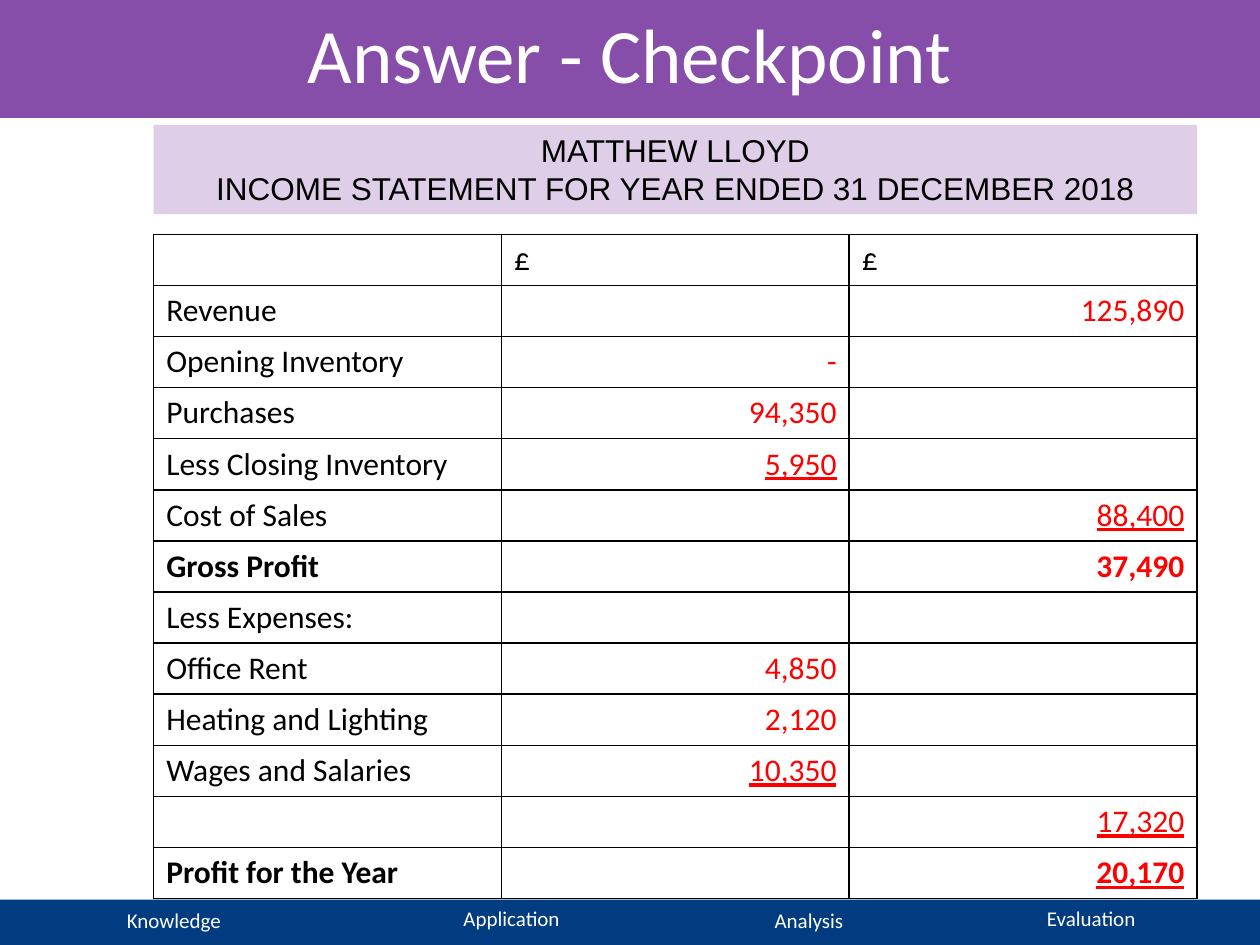
from dataclasses import dataclass

import pptx
import pptx.dml.color
import pptx.enum.shapes
import pptx.enum.text
import pptx.oxml
import pptx.oxml.ns
import pptx.util

ALIGN = pptx.enum.text.PP_ALIGN
ANCHOR = pptx.enum.text.MSO_ANCHOR
SLIDE_W, SLIDE_H = 10, 7.5


@dataclass(frozen=True)
class Theme:
    purple: str = "874EA9"
    lilac: str = "DECEE8"
    navy: str = "003C7F"
    white: str = "FFFFFF"
    black: str = "000000"
    answer: str = "FF0000"
    body_font: str = "Calibri"
    heading_font: str = "Arial"
    title_size: int = 44
    body_size: int = 18
    footer_size: int = 12
    rule_width: int = 1


THEME = Theme()

# Label, first column, second column; "_" marks an underlined amount.
STATEMENT = [
    ("", "£", "£"),
    ("Revenue", "", "125,890"),
    ("Opening Inventory", "-", ""),
    ("Purchases", "94,350", ""),
    ("Less Closing Inventory", "_5,950", ""),
    ("Cost of Sales", "", "_88,400"),
    ("Gross Profit", "", "37,490"),
    ("Less Expenses:", "", ""),
    ("Office Rent", "4,850", ""),
    ("Heating and Lighting", "2,120", ""),
    ("Wages and Salaries", "_10,350", ""),
    ("", "", "_17,320"),
    ("Profit for the Year", "", "_20,170"),
]
TOTALS = {"Gross Profit", "Profit for the Year"}

# Skill and the left and top of its label within the footer.
SKILLS = [("Knowledge", 0.04, 0.01), ("Application", 2.72, 0),
          ("Analysis", 5.08, 0.01), ("Evaluation", 7.32, 0)]
SKILL_SIZE = (2.68, 0.3)


def rgb(value):
    return pptx.dml.color.RGBColor.from_string(value)


def inches(box):
    return [pptx.util.Inches(length) for length in box]


def style(paragraph, color, size, font=THEME.body_font, align=ALIGN.CENTER,
          bold=None, underline=None):
    paragraph.alignment = align
    paragraph.font.name = font
    paragraph.font.size = pptx.util.Pt(size)
    paragraph.font.color.rgb = rgb(color)
    paragraph.font.bold = bold
    paragraph.font.underline = underline


def add_band(slide, box, color):
    band = slide.shapes.add_shape(
        pptx.enum.shapes.MSO_SHAPE.RECTANGLE, *inches(box))
    band.shadow.inherit = False
    band.fill.solid()
    band.fill.fore_color.rgb = rgb(color)
    band.line.fill.background()
    return band


def add_title(slide, box, text):
    band = add_band(slide, (0, 0, SLIDE_W, 0.92), THEME.purple)
    band.line.color.rgb = rgb(THEME.purple)
    band.line.width = pptx.util.Pt(2)
    title = slide.shapes.title
    title.left, title.top, title.width, title.height = inches(box)
    title.text_frame.text = text
    title.text_frame.vertical_anchor = ANCHOR.TOP
    style(title.text_frame.paragraphs[0], THEME.white, THEME.title_size)
    slide.shapes._spTree.append(title._element)  # bring in front of its band


def add_footer(slide, box):
    left, top, _, _ = box
    add_band(slide, box, THEME.navy)
    for skill, dx, dy in SKILLS:
        label = slide.shapes.add_textbox(
            *inches((left + dx, top + dy, *SKILL_SIZE)))
        label.text_frame.word_wrap = True
        label.text_frame.text = skill
        style(label.text_frame.paragraphs[0], THEME.white, THEME.footer_size)


def add_heading(slide, box, lines):
    frame = add_band(slide, box, THEME.lilac).text_frame
    frame.word_wrap = True
    frame.vertical_anchor = ANCHOR.TOP
    frame.text = "\n".join(lines)
    for paragraph in frame.paragraphs:
        style(paragraph, THEME.black, THEME.body_size, THEME.heading_font)


def add_borders(cell):
    properties = cell._tc.get_or_add_tcPr()
    for side in "LRTB":
        properties.append(pptx.oxml.parse_xml(
            f'<a:ln{side} {pptx.oxml.ns.nsdecls("a")} '
            f'w="{pptx.util.Pt(THEME.rule_width)}"><a:solidFill>'
            f'<a:srgbClr val="{THEME.black}"/></a:solidFill></a:ln{side}>'))


def fill_cell(cell, text, is_amount, is_total):
    add_borders(cell)
    cell.fill.background()
    cell.text = text.lstrip("_")
    style(cell.text_frame.paragraphs[0],
          THEME.answer if is_amount else THEME.black, THEME.body_size,
          align=ALIGN.RIGHT if is_amount else ALIGN.LEFT,
          bold=is_total, underline=text.startswith("_"))


def add_statement(slide, box):
    table = slide.shapes.add_table(
        len(STATEMENT), len(STATEMENT[0]), *inches(box)).table
    table.first_row = table.horz_banding = False
    for r, entries in enumerate(STATEMENT):
        for c, text in enumerate(entries):
            fill_cell(table.cell(r, c), text, is_amount=r > 0 and c > 0,
                      is_total=entries[0] in TOTALS)


def main():
    deck = pptx.Presentation()
    deck.slide_width, deck.slide_height = inches((SLIDE_W, SLIDE_H))
    slide = deck.slides.add_slide(deck.slide_layouts.get_by_name("Title Only"))
    left, width = 1.22, 8.28
    add_footer(slide, (0, 7.14, SLIDE_W, 0.36))
    add_title(slide, (0.5, 0, 9, 1.25), "Answer - Checkpoint")
    add_statement(slide, (left, 1.86, width, 5.2))
    add_heading(slide, (left, 0.99, width, 0.71),
                ["MATTHEW LLOYD",
                 "INCOME STATEMENT FOR YEAR ENDED 31 DECEMBER 2018"])
    deck.save("out.pptx")


if __name__ == "__main__":
    main()
